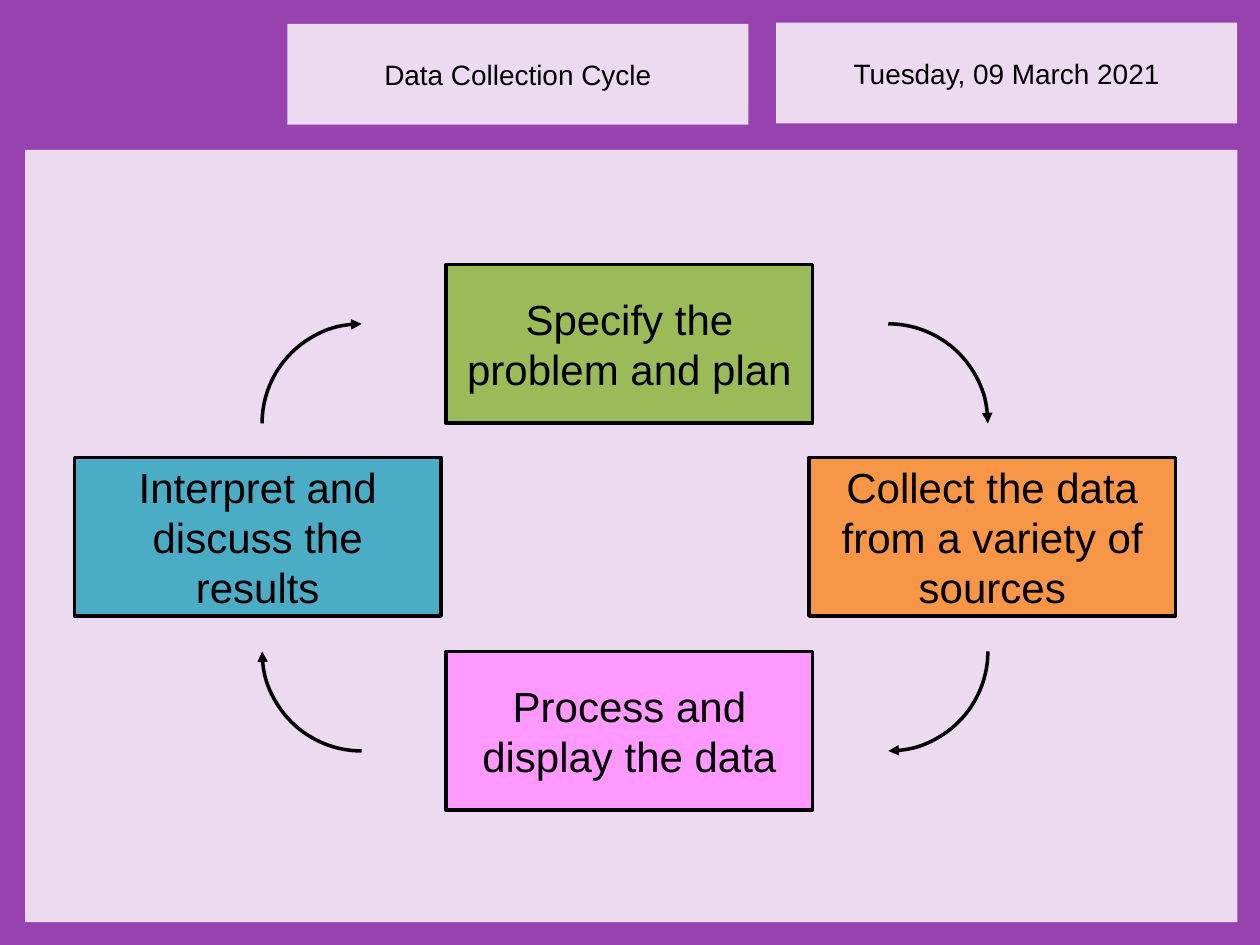
from lxml import etree
from pptx import Presentation
from pptx.dml.color import RGBColor
from pptx.enum.shapes import MSO_SHAPE as Shape
from pptx.enum.text import MSO_ANCHOR as Anchor, MSO_AUTO_SIZE as AutoSize, PP_ALIGN as Align
from pptx.oxml.ns import qn
from pptx.util import Inches, Pt

PURPLE = RGBColor(0x98, 0x42, 0xB0)
LILAC = RGBColor(0xEC, 0xDA, 0xF1)
GREEN = RGBColor(0x9B, 0xBB, 0x59)
ORANGE = RGBColor(0xF7, 0x96, 0x46)
PINK = RGBColor(0xFF, 0x99, 0xFF)
TEAL = RGBColor(0x4B, 0xAC, 0xC6)
BLACK = RGBColor(0, 0, 0)


def fill_box(box, color, text="", size=16):
    """Give a box its fill and centred text."""
    box.fill.solid()
    box.fill.fore_color.rgb = color
    frame = box.text_frame
    frame.text = text
    for name, value in {"word_wrap": True, "auto_size": AutoSize.NONE,
                        "vertical_anchor": Anchor.MIDDLE}.items():
        setattr(frame, name, value)
    para = frame.paragraphs[0]
    para.alignment = Align.CENTER
    for name, value in {"name": "Arial", "size": Pt(size)}.items():
        setattr(para.font, name, value)
    para.font.color.rgb = BLACK


def add_plain(kind, left, top, width, height):
    """Add a preset shape without shadow or outline."""
    shape = page.shapes.add_shape(kind, Inches(left), Inches(top), Inches(width), Inches(height))
    shape.shadow.inherit = False
    shape.line.fill.background()
    return shape


deck = Presentation()
deck.slide_width, deck.slide_height = Inches(10), Inches(7.5)
page = deck.slides.add_slide(deck.slide_layouts[5])
page.background.fill.solid()
page.background.fill.fore_color.rgb = PURPLE

# Header and content panel
title = page.shapes.title
for name, value in {"left": 2.28, "top": 0.19, "width": 3.66, "height": 0.8}.items():
    setattr(title, name, Inches(value))
fill_box(title, LILAC, "Data Collection Cycle")
fill_box(add_plain(Shape.RECTANGLE, 6.16, 0.18, 3.66, 0.8), LILAC, "Tuesday, 09 March 2021")
fill_box(add_plain(Shape.RECTANGLE, 0.2, 1.19, 9.62, 6.13), LILAC)

# Steps, clockwise from the top
STEPS = [
    ("Specify the problem and plan", 3.54, 2.1, GREEN),
    ("Collect the data from a variety of sources", 6.42, 3.63, ORANGE),
    ("Process and display the data", 3.54, 5.17, PINK),
    ("Interpret and discuss the results", 0.59, 3.63, TEAL),
]
for text, left, top, color in STEPS:
    step = add_plain(Shape.RECTANGLE, left, top, 2.91, 1.26)
    fill_box(step, color, text, 24)
    step.line.color.rgb = BLACK
    step.line.width = Pt(2)

# Each arrow is a quarter circle, turned 90 degrees further than the last
RADIUS = 0.79
ARC_CENTRES = [(7.05, 3.36), (7.05, 5.17), (2.87, 5.17), (2.87, 3.36)]
for turn, (x, y) in enumerate(ARC_CENTRES):
    arrow = add_plain(Shape.ARC, x - RADIUS, y - RADIUS, 2 * RADIUS, 2 * RADIUS)
    arrow.rotation = 90 * turn
    arrow.fill.background()
    arrow.line.color.rgb = BLACK
    arrow.line.width = Pt(2)
    outline = arrow.line._get_or_add_ln()
    etree.SubElement(outline, qn("a:tailEnd"), type="triangle")

deck.save("out.pptx")
